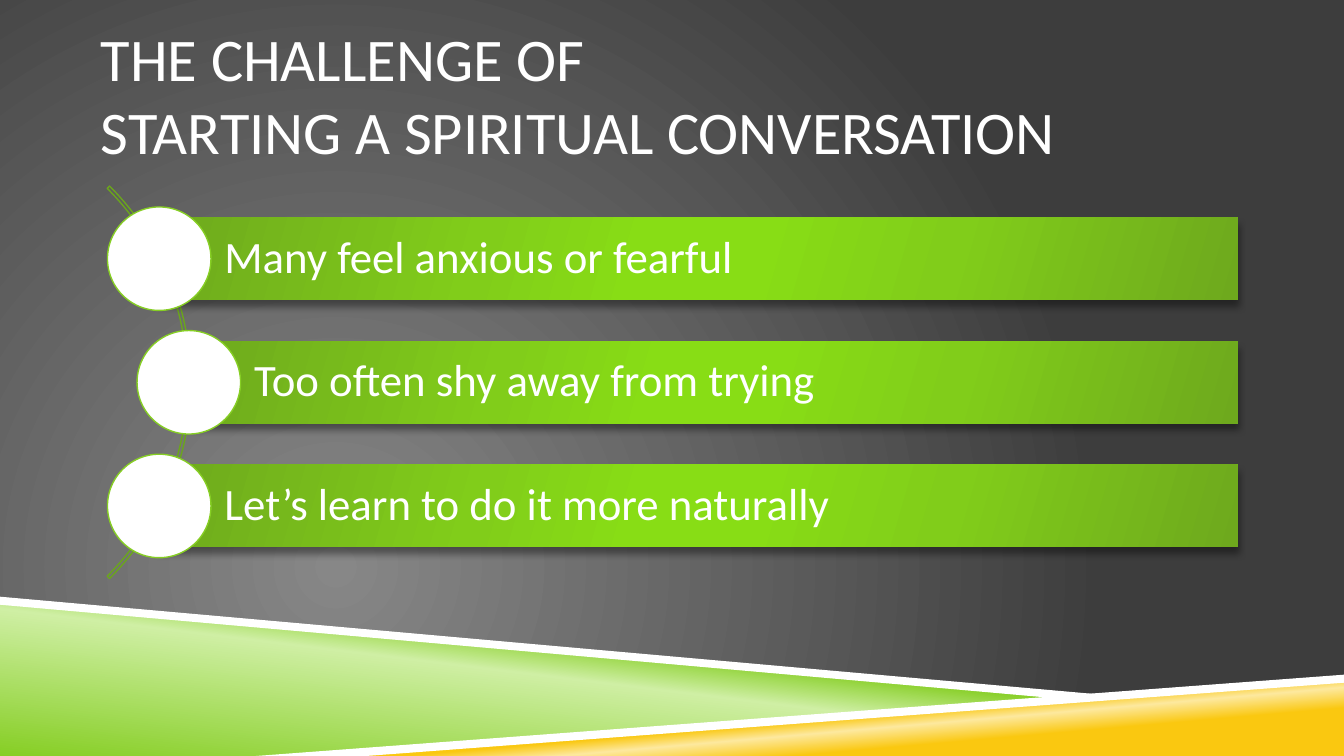
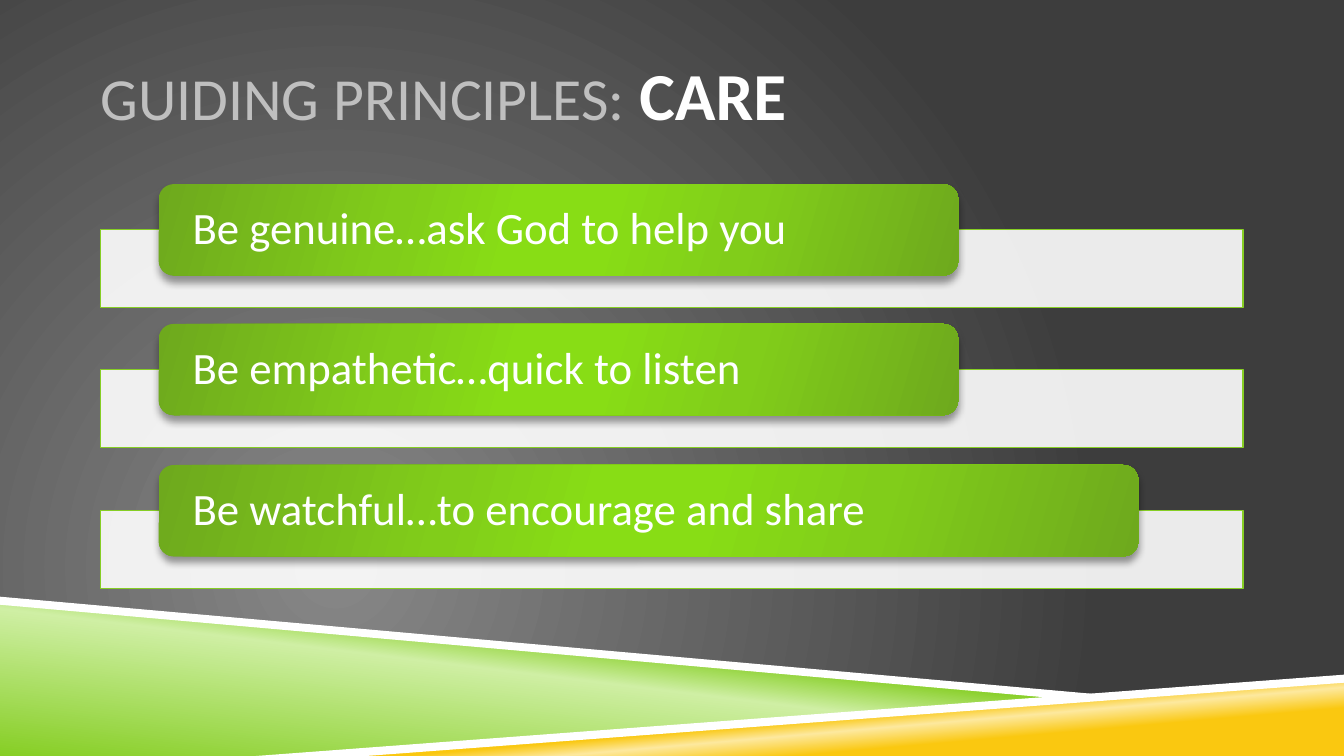
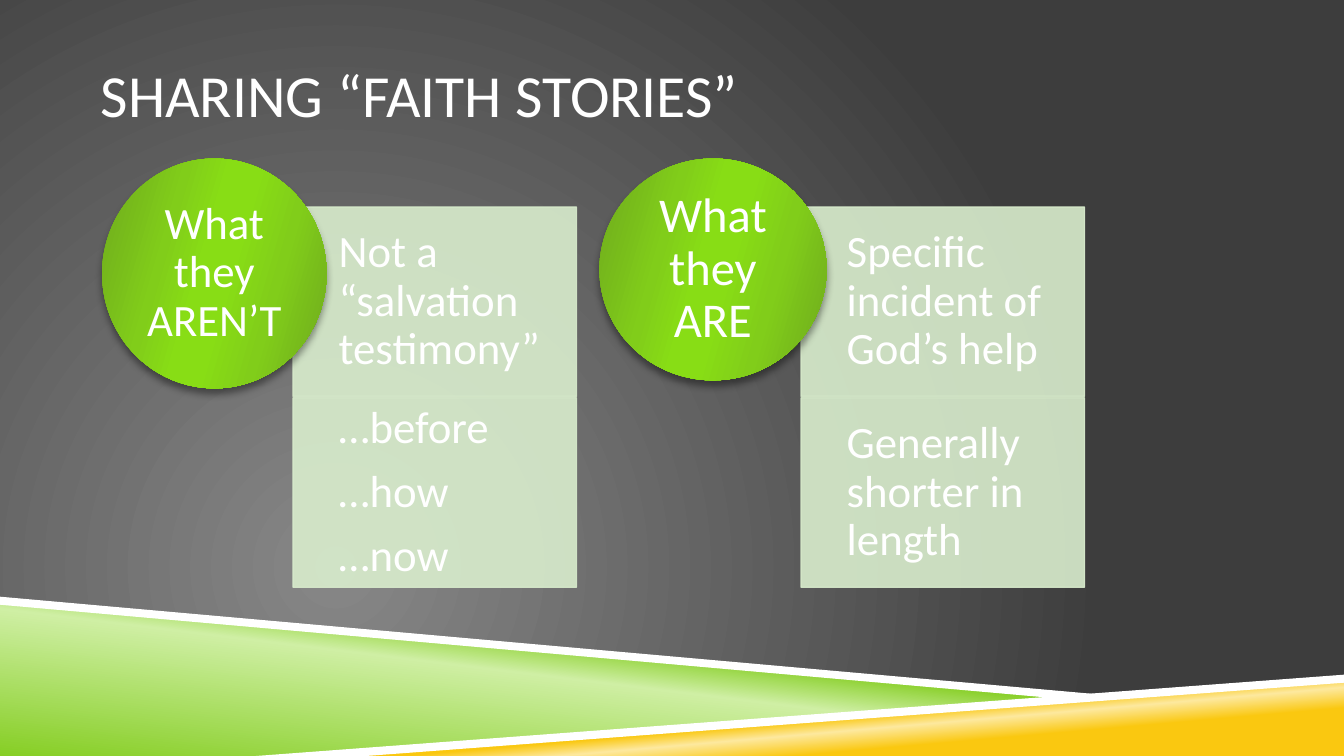
from lxml.etree import SubElement
from pptx import Presentation
from pptx.dml.color import RGBColor
from pptx.enum.shapes import MSO_SHAPE
from pptx.enum.text import MSO_ANCHOR, PP_ALIGN
from pptx.oxml.ns import qn
from pptx.util import Pt

PX = 9144
FONT = "Calibri"
COLORS = {
    "white": "FFFFFF",
    "gray": "BFBFBF",
    "glow": "878787",
    "dark": "3D3D3D",
    "lime": "86CE24",
    "pale_lime": "CFEFA4",
    "amber": "FAC810",
    "pale_amber": "FDE99F",
    "moss": "6EA91D",
    "leaf": "81CD1A",
    "bright": "88DD15",
    "arc": "6BA51D",
    "mint": "D9EDCD",
    "black": "000000",
}
GLOSS = [(0, "moss"), (30, "leaf"), (45, "bright"), (55, "bright"), (73, "leaf"), (100, "moss")]
BANDS = [
    ([(0, 448), (792, 519), (200, 563), (0, 563)],
     [(0, "lime"), (52, "pale_lime"), (66, "lime")], 277),
    ([(198, 563), (1000, 504), (1000, 563)],
     [(28, "amber"), (40, "pale_amber"), (48, "amber")], 265),
]
STRIPES = [
    [(0, 444), (0, 450), (790, 520), (832, 518)],
    [(1000, 502), (184, 563), (266, 563), (1000, 508)],
]


def rgb(name):
    return RGBColor.from_string(COLORS[name])


def px(*lengths):
    return [n * PX for n in lengths]


def set_gradient(fill, element, stops, angle=None):
    fill.gradient()
    grad = element.find(".//" + qn("a:gradFill"))
    for child in list(grad):
        grad.remove(child)
    gs_list = SubElement(grad, qn("a:gsLst"))
    for pos, color in stops:
        gs = SubElement(gs_list, qn("a:gs"), pos=str(pos * 1000))
        SubElement(gs, qn("a:srgbClr"), val=COLORS[color])
    if angle is None:
        path = SubElement(grad, qn("a:path"), path="circle")
        SubElement(path, qn("a:fillToRect"), l="50000", t="100000", r="100000", b="50000")
    else:
        SubElement(grad, qn("a:lin"), ang=str(angle * 60000), scaled="0")


def set_opacity(element, percent):
    for color in element.iter(qn("a:srgbClr")):
        SubElement(color, qn("a:alpha"), val=str(percent * 1000))


def add_plain(slide, kind, box, fill=None, line=None, opacity=100):
    s = slide.shapes.add_shape(kind, *px(*box))
    s.shadow.inherit = False
    if fill:
        s.fill.solid()
        s.fill.fore_color.rgb = rgb(fill)
        if opacity < 100:
            set_opacity(s._element.spPr, opacity)
    else:
        s.fill.background()
    if line:
        s.line.color.rgb = rgb(line)
        s.line.width = Pt(0.75)
    else:
        s.line.fill.background()
    return s


def add_glossy(slide, kind, box):
    s = add_plain(slide, kind, box)
    set_gradient(s.fill, s._element.spPr, GLOSS, 16)
    effects = s._element.spPr.find(qn("a:effectLst"))
    shadow = SubElement(effects, qn("a:outerShdw"), blurRad="50800", dist="42000",
                        dir="5400000", rotWithShape="0")
    color = SubElement(shadow, qn("a:srgbClr"), val=COLORS["black"])
    SubElement(color, qn("a:alpha"), val="40000")
    return s


def style_font(font, size, color="white"):
    font.name = FONT
    font.size = Pt(size)
    font.color.rgb = rgb(color)


def set_frame(s, insets):
    tf = s.text_frame
    tf.word_wrap = True
    tf.vertical_anchor = MSO_ANCHOR.MIDDLE
    tf.margin_left, tf.margin_top, tf.margin_right, tf.margin_bottom = px(*insets)
    return tf


def write(s, lines, insets=(0, 0, 0, 0), size=24, align=PP_ALIGN.LEFT):
    tf = set_frame(s, insets)
    for i, line in enumerate(lines):
        p = tf.add_paragraph() if i else tf.paragraphs[0]
        p.text = line
        p.alignment = align
        p.line_spacing = 0.9
        p.space_after = Pt(size * 0.35)
        style_font(p.font, size)


def add_title(slide, text, size=32, color="white", accent=None):
    s = slide.shapes.add_textbox(*px(75, 23, 850, 94))
    p = set_frame(s, (0, 5, 0, 5)).paragraphs[0]
    p.text = text
    style_font(p.font, size, color)
    if accent:
        r = p.add_run()
        r.text = accent
        style_font(r.font, 36)
        r.font.bold = True


def add_polygon(slide, points):
    builder = slide.shapes.build_freeform(*points[0], scale=PX)
    builder.add_line_segments(points[1:], close=True)
    s = builder.convert_to_shape()
    s.shadow.inherit = False
    s.line.fill.background()
    return s


def add_base(prs):
    slide = prs.slides.add_slide(prs.slide_layouts[6])
    set_gradient(slide.background.fill, slide._element, [(0, "glow"), (100, "dark")])
    for points, stops, angle in BANDS:
        s = add_polygon(slide, points)
        set_gradient(s.fill, s._element.spPr, stops, angle)
    for points in STRIPES:
        s = add_polygon(slide, points)
        s.fill.solid()
        s.fill.fore_color.rgb = rgb("white")
    return slide


def add_arc(slide):
    s = add_plain(slide, MSO_SHAPE.BLOCK_ARC, (-271, 78, 413, 413), line="arc")
    for i, value in enumerate((189, 27, 0.006)):
        s.adjustments[i] = value


def add_bullet_bar(slide, left, top, text):
    bar = add_glossy(slide, MSO_SHAPE.RECTANGLE, (left, top, 921 - left, 61))
    write(bar, [text], (49, 7, 7, 7))
    add_plain(slide, MSO_SHAPE.OVAL, (left - 38, top - 8, 77, 77), "white", "lime")


def add_principle(slide, top, width, text):
    add_plain(slide, MSO_SHAPE.RECTANGLE, (75, top + 34, 850, 58), "white", "lime", 90)
    tab = add_glossy(slide, MSO_SHAPE.ROUNDED_RECTANGLE, (118, top, width, 68))
    write(tab, [text], (22, 0, 22, 0))


def add_story_column(slide, left, cells, circle_box, heading, heading_size):
    for i, lines in enumerate(cells):
        cell = add_plain(slide, MSO_SHAPE.RECTANGLE, (left, 154 + i * 142, 211, 141),
                         "mint", "mint", 90)
        set_opacity(cell._element.spPr.find(qn("a:ln")), 90)
        write(cell, lines, (34, 19, 19, 19))
    circle = add_glossy(slide, MSO_SHAPE.OVAL, circle_box)
    write(circle, [heading], size=heading_size, align=PP_ALIGN.CENTER)


def main():
    prs = Presentation()
    prs.slide_width = 1000 * PX
    prs.slide_height = prs.slide_width * 9 // 16

    slide = add_base(prs)
    add_title(slide, "THE CHALLENGE OF\vSTARTING A SPIRITUAL CONVERSATION", 32.4)
    add_arc(slide)
    challenges = [
        (118, "Many feel anxious or fearful"),
        (140, "Too often shy away from trying"),
        (118, "Let’s learn to do it more naturally"),
    ]
    for i, (left, text) in enumerate(challenges):
        add_bullet_bar(slide, left, 162 + i * 92, text)

    slide = add_base(prs)
    add_title(slide, "GUIDING PRINCIPLES: ", color="gray", accent="CARE")
    principles = [
        (595, "Be genuine…ask God to help you"),
        (595, "Be empathetic…quick to listen"),
        (729, "Be watchful…to encourage and share"),
    ]
    for i, (width, text) in enumerate(principles):
        add_principle(slide, 137 + i * 209 // 2, width, text)

    slide = add_base(prs)
    add_title(slide, "SHARING “FAITH STORIES”")
    add_story_column(slide, 218,
                     [["Not a “salvation testimony”"], ["…before", "…how", "…now"]],
                     (76, 118, 167, 171), "What they AREN’T", 24)
    add_story_column(slide, 596,
                     [["Specific incident of God’s help"], ["Generally shorter in length"]],
                     (446, 118, 169, 165), "What they ARE", 26)

    prs.save("out.pptx")


if __name__ == "__main__":
    main()
